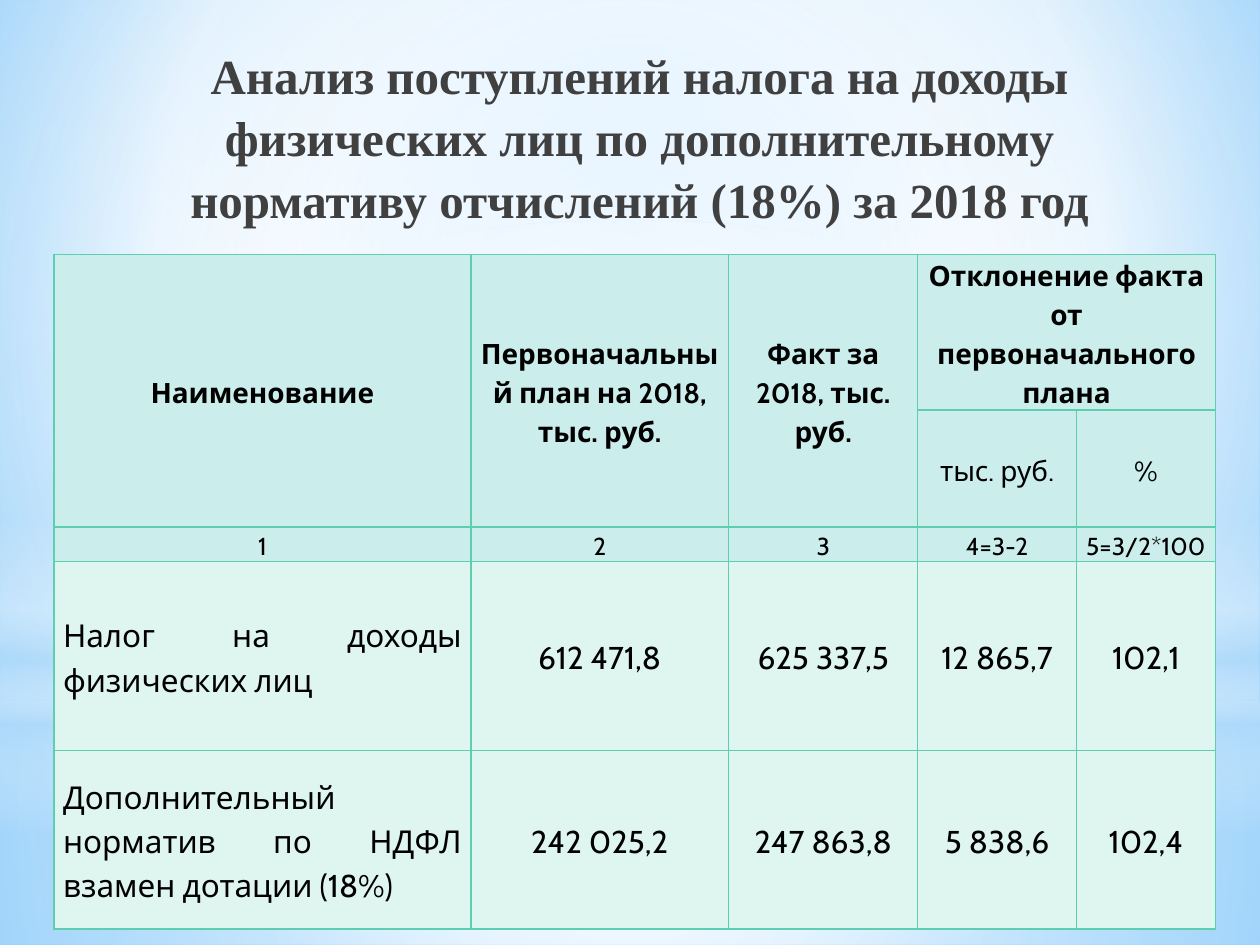
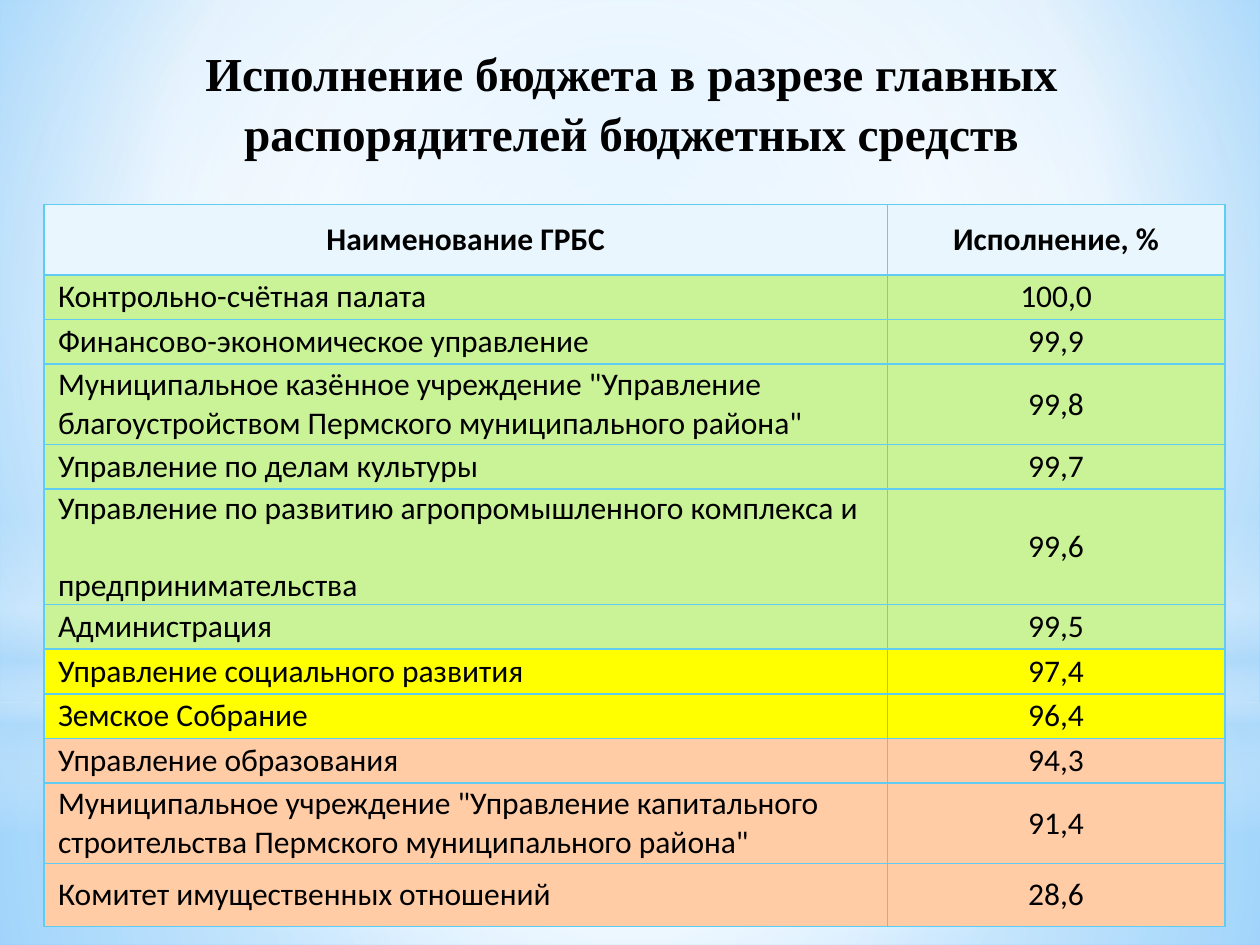
"""Build two budget slides: income tax receipts and spending by budget manager."""
import dataclasses

import pptx
import pptx.dml.color
import pptx.enum.shapes
import pptx.enum.text
import pptx.oxml
import pptx.oxml.ns
import pptx.util

Cm = pptx.util.Cm
Pt = pptx.util.Pt
ALIGN = pptx.enum.text.PP_ALIGN
ANCHOR = pptx.enum.text.MSO_ANCHOR
SHAPE = pptx.enum.shapes.MSO_SHAPE


@dataclasses.dataclass(frozen=True)
class Theme:
    """Colours, fonts and type sizes of the deck."""
    black: str = "000000"
    grey: str = "404040"
    white: str = "FFFFFF"
    haze: str = "B4DCFA"
    sky: str = "9ED5FF"
    blue: str = "5BB9FF"
    tax_border: str = "5DCEAF"
    tax_head: str = "CBEDEC"
    tax_body: str = "DFF5EF"
    budget_border: str = "5ECCF3"
    budget_head: str = "EAF6FD"
    high: str = "CAF297"
    middle: str = "FFFF00"
    low: str = "FFCCA6"
    title_font: str = "Times New Roman"
    tax_font: str = "Cabin"
    budget_font: str = "Calibri"
    tax_title: float = 28
    budget_title: float = 27
    body: float = 18
    head: float = 16
    small: float = 14


T = Theme()
CENTRE = (50, 50, 50, 50)

TAX_ROWS = [
    ["Наименование", "Первоначальный план на 2018, тыс. руб.", "Факт за 2018, тыс. руб.",
     "Отклонение факта от первоначального плана", ""],
    ["", "", "", "тыс. руб.", "%"],
    ["1", "2", "3", "4=3-2", "5=3/2*100"],
    ["Налог на доходы физических лиц", "612 471,8", "625 337,5", "12 865,7", "102,1"],
    ["Дополнительный норматив по НДФЛ взамен дотации (18%)",
     "242 025,2", "247 863,8", "5 838,6", "102,4"],
]

BUDGET_ROWS = [
    ("Контрольно-счётная палата", "100,0", T.high),
    ("Финансово-экономическое управление", "99,9", T.high),
    ("Муниципальное казённое учреждение \"Управление\n"
     "благоустройством Пермского муниципального района\"", "99,8", T.high),
    ("Управление по делам культуры", "99,7", T.high),
    ("Управление по развитию агропромышленного комплекса и\nпредпринимательства",
     "99,6", T.high),
    ("Администрация", "99,5", T.high),
    ("Управление социального развития", "97,4", T.middle),
    ("Земское Собрание", "96,4", T.middle),
    ("Управление образования", "94,3", T.low),
    ("Муниципальное учреждение \"Управление капитального\n"
     "строительства Пермского муниципального района\"", "91,4", T.low),
    ("Комитет имущественных отношений", "28,6", T.low),
]


def rgb(color):
    """Return a colour object for a hex string."""
    return pptx.dml.color.RGBColor.from_string(color)


def paint_gradient(parent, stops, focus=None):
    """Swap the solid fill of parent for a circular or a vertical gradient."""
    gs = "".join(
        f'<a:gs pos="{pos * 1000}"><a:srgbClr val="{color}">'
        f'<a:alpha val="{alpha * 1000}"/></a:srgbClr></a:gs>'
        for pos, color, alpha in stops)
    if focus:
        l, t, r, b = (v * 1000 for v in focus)
        course = (f'<a:path path="circle"><a:fillToRect l="{l}" t="{t}" '
                  f'r="{r}" b="{b}"/></a:path>')
    else:
        course = '<a:lin ang="5400000" scaled="0"/>'
    fill = pptx.oxml.parse_xml(
        f'<a:gradFill {pptx.oxml.ns.nsdecls("a")} rotWithShape="1">'
        f'<a:gsLst>{gs}</a:gsLst>{course}</a:gradFill>')
    parent.replace(parent.find(pptx.oxml.ns.qn("a:solidFill")), fill)


def add_glow(s, tree, position, kind, top, height, stops, focus=None):
    """Draw a full-width translucent shape and place it in the master tree."""
    sp = s.shapes.add_shape(kind, 0, Cm(top), Cm(25.4), Cm(height))
    sp.shadow.inherit = False
    sp.line.fill.background()
    sp.fill.solid()
    paint_gradient(sp._element.spPr, stops, focus)
    tree.insert(position, sp._element)


def dress_master(prs, s):
    """Give the master its sky background and light effects."""
    master = prs.slide_master
    master.background.fill.solid()
    paint_gradient(master.element.find(".//" + pptx.oxml.ns.qn("p:bgPr")),
                   [(0, T.sky, 100), (60, T.white, 100), (100, T.blue, 100)],
                   (20, 10, 20, 60))
    glows = [
        (SHAPE.RECTANGLE, 14.17, 4.88,
         [(0, T.white, 91), (37, T.white, 76), (100, T.haze, 79)], CENTRE),
        (SHAPE.RECTANGLE, 0, 14.17,
         [(0, T.white, 89), (48, T.white, 62), (100, T.haze, 79)], CENTRE),
        (SHAPE.RECTANGLE, 10.46, 6.35,
         [(0, T.white, 0), (29, T.white, 30), (45, T.haze, 40),
          (55, T.white, 26), (65, T.haze, 60), (100, T.white, 0)], None),
        (SHAPE.OVAL, 4.45, 14.17, [(0, T.white, 100), (56, T.white, 0)], CENTRE),
    ]
    tree = master.element.cSld.spTree
    for position, glow in enumerate(glows, start=2):
        add_glow(s, tree, position, *glow)


def style_font(font, name, size, color, bold):
    """Set the typeface, size, colour and weight of a font."""
    font.name, font.size, font.bold = name, Pt(size), bold
    font.color.rgb = rgb(color)


def set_title(s, text, box, size, color):
    """Fill, place and format the title placeholder."""
    sp = s.shapes.title
    sp.left, sp.top, sp.width, sp.height = map(Cm, box)
    tf = sp.text_frame
    tf.text = text
    tf.word_wrap = True
    tf.auto_size = pptx.enum.text.MSO_AUTO_SIZE.NONE
    tf.vertical_anchor = ANCHOR.TOP
    p = tf.paragraphs[0]
    p.alignment = ALIGN.CENTER
    p.line_spacing = 1.05
    style_font(p.font, T.title_font, size, color, True)


def add_grid(s, left, top, widths, heights):
    """Add a plain table with the given column widths and row heights."""
    frame = s.shapes.add_table(len(heights), len(widths), Cm(left), Cm(top),
                               Cm(sum(widths)), Cm(sum(heights)))
    table = frame.table
    table.first_row = table.horz_banding = False
    for column, width in zip(table.columns, widths):
        column.width = Cm(width)
    for row, height in zip(table.rows, heights):
        row.height = Cm(height)
    return table


def set_borders(cell, color):
    """Draw one-point borders on the four sides of a cell."""
    tc_pr = cell._tc.get_or_add_tcPr()
    for i, side in enumerate("LRTB"):
        tc_pr.insert(i, pptx.oxml.parse_xml(
            f'<a:ln{side} {pptx.oxml.ns.nsdecls("a")} w="12700"><a:solidFill>'
            f'<a:srgbClr val="{color}"/></a:solidFill></a:ln{side}>'))


def set_cell(cell, text, font, size, fill, border, bold=False,
             align=ALIGN.CENTER, side=0.0, spacing=1.0):
    """Write and format one table cell; each line becomes a paragraph."""
    cell.fill.solid()
    cell.fill.fore_color.rgb = rgb(fill)
    set_borders(cell, border)
    cell.vertical_anchor = ANCHOR.MIDDLE
    cell.margin_left = cell.margin_right = Cm(side)
    cell.margin_top = cell.margin_bottom = 0
    cell.text = text
    for p in cell.text_frame.paragraphs:
        p.alignment = align
        p.line_spacing = spacing
        style_font(p.font, font, size, T.black, bold)


def add_tax_table(s):
    """Add the table of income tax receipts."""
    table = add_grid(s, 1.09, 5.13, [8.4, 5.2, 3.81, 3.2, 2.8],
                     [3.14, 2.35, 0.69, 3.81, 3.6])
    sizes = [T.head, T.head, T.small, T.body, T.body]
    for r, row in enumerate(TAX_ROWS):
        for c, text in enumerate(row):
            body = r > 2
            set_cell(table.cell(r, c), text, T.tax_font, sizes[r],
                     T.tax_body if body else T.tax_head, T.tax_border, bold=r == 0,
                     align=ALIGN.JUSTIFY if body and c == 0 else ALIGN.CENTER,
                     side=0.18, spacing=1.15)
    for c in range(3):
        table.cell(0, c).merge(table.cell(1, c))
    table.cell(0, 3).merge(table.cell(0, 4))


def add_budget_table(s):
    """Add the table of budget execution by manager."""
    line, double = 0.9, 1.62
    table = add_grid(s, 0.89, 4.12, [17, 6.8],
                     [1.42, line, line, double, line, 2.32, line, line, line, line,
                      double, 1.27])
    rows = [("Наименование ГРБС", "Исполнение, %", T.budget_head)] + BUDGET_ROWS
    for r, (name, share, fill) in enumerate(rows):
        for c, text in enumerate((name, share)):
            set_cell(table.cell(r, c), text, T.budget_font, T.body, fill,
                     T.budget_border, bold=r == 0,
                     align=ALIGN.LEFT if r and c == 0 else ALIGN.CENTER,
                     side=0.28 if c == 0 else 0)
    table.cell(5, 0).text_frame.paragraphs[1].space_before = Pt(22)


def main():
    """Build and save the deck."""
    prs = pptx.Presentation()
    prs.slide_width, prs.slide_height = Cm(25.4), Cm(19.05)
    tax, budget = (prs.slides.add_slide(prs.slide_layouts[5]) for _ in range(2))
    dress_master(prs, tax)
    set_title(tax, "Анализ поступлений налога на доходы физических лиц по "
                   "дополнительному нормативу отчислений (18%) за 2018 год",
              (2.49, 0.74, 20.8, 3.81), T.tax_title, T.grey)
    add_tax_table(tax)
    set_title(budget, "Исполнение бюджета в разрезе главных распорядителей "
                      "бюджетных средств",
              (1.3, 0.71, 22.86, 3.18), T.budget_title, T.black)
    add_budget_table(budget)
    prs.save("out.pptx")


if __name__ == "__main__":
    main()
